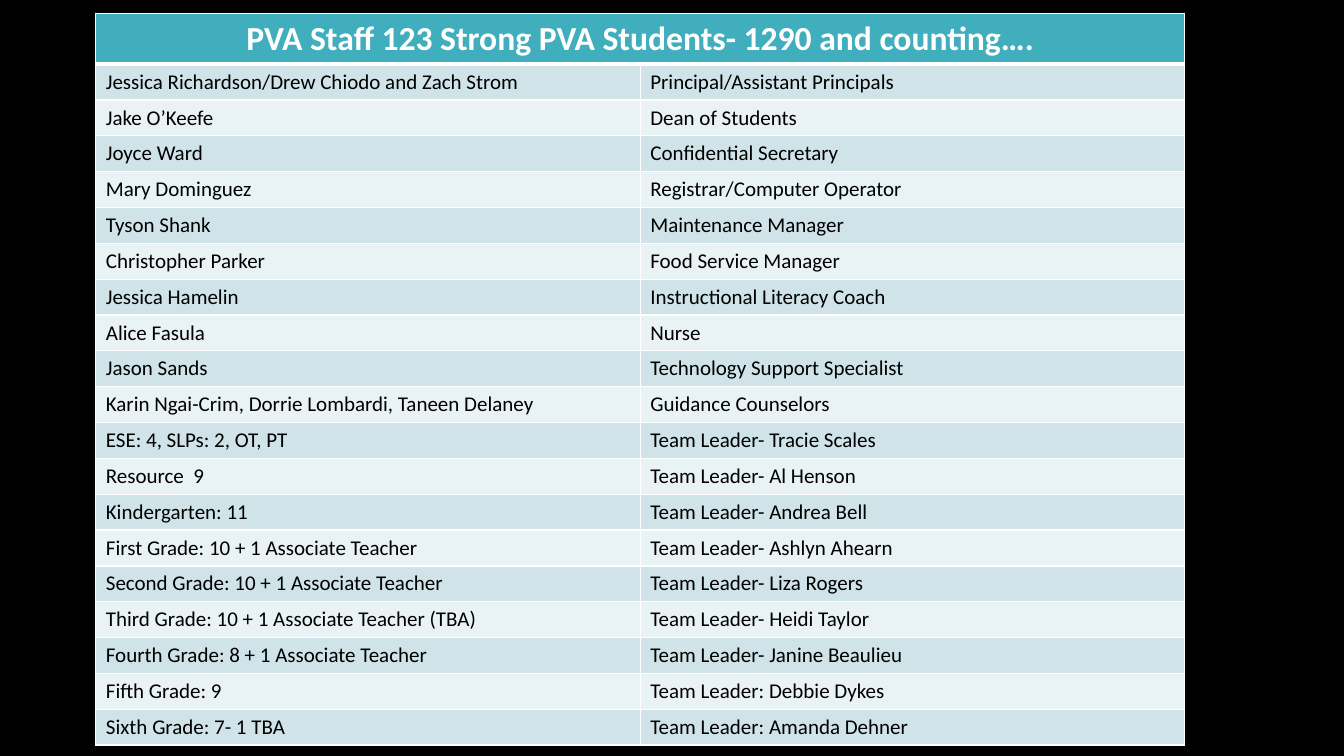
from lxml.etree import SubElement
from pptx import Presentation
from pptx.dml.color import RGBColor
from pptx.enum.text import PP_ALIGN
from pptx.oxml.ns import qn
from pptx.util import Inches, Pt

TITLE = "PVA Staff 123 Strong PVA Students- 1290 and counting…."
STAFF = [
    ("Jessica Richardson/Drew Chiodo and Zach Strom", "Principal/Assistant Principals"),
    ("Jake O’Keefe", "Dean of Students"),
    ("Joyce Ward", "Confidential Secretary"),
    ("Mary Dominguez", "Registrar/Computer Operator"),
    ("Tyson Shank", "Maintenance Manager"),
    ("Christopher Parker", "Food Service Manager"),
    ("Jessica Hamelin", "Instructional Literacy Coach"),
    ("Alice Fasula", "Nurse"),
    ("Jason Sands", "Technology Support Specialist"),
    ("Karin Ngai-Crim, Dorrie Lombardi, Taneen Delaney", "Guidance Counselors"),
    ("ESE: 4, SLPs: 2, OT, PT", "Team Leader- Tracie Scales"),
    ("Resource  9", "Team Leader- Al Henson"),
    ("Kindergarten: 11", "Team Leader- Andrea Bell"),
    ("First Grade: 10 + 1 Associate Teacher", "Team Leader- Ashlyn Ahearn"),
    ("Second Grade: 10 + 1 Associate Teacher", "Team Leader- Liza Rogers"),
    ("Third Grade: 10 + 1 Associate Teacher (TBA)", "Team Leader- Heidi Taylor"),
    ("Fourth Grade: 8 + 1 Associate Teacher", "Team Leader- Janine Beaulieu"),
    ("Fifth Grade: 9", "Team Leader: Debbie Dykes"),
    ("Sixth Grade: 7- 1 TBA", "Team Leader: Amanda Dehner"),
]
COLORS = {
    "background": "000000",
    "header": "41AEBD",
    "dark_band": "CFE3E8",
    "light_band": "E9F2F4",
    "border": "FFFFFF",
    "header_text": "FFFFFF",
    "body_text": "000000",
}
FONT = "Calibri"
HEADER_HEIGHT, ROW_HEIGHT, TABLE_HEIGHT = 0.43, 0.34, 7.15


def color(name):
    return RGBColor.from_string(COLORS[name])


def add_borders(cell, widths):
    properties = cell._tc.get_or_add_tcPr()
    for side, width in widths.items():
        line = SubElement(properties, qn(f"a:ln{side}"), w=str(Pt(width)))
        fill = SubElement(line, qn("a:solidFill"))
        SubElement(fill, qn("a:srgbClr"), val=COLORS["border"])


def style_cell(cell, fill, text_color, size, bold, top=1, bottom=1):
    add_borders(cell, {"L": 1, "R": 1, "T": top, "B": bottom})
    cell.fill.solid()
    cell.fill.fore_color.rgb = color(fill)
    font = cell.text_frame.paragraphs[0].font
    font.name, font.size, font.bold = FONT, Pt(size), bold
    font.color.rgb = color(text_color)


deck = Presentation()
deck.slide_width, deck.slide_height = Inches(13.33), Inches(7.5)
page = deck.slides.add_slide(deck.slide_layouts[6])
page.background.fill.solid()
page.background.fill.fore_color.rgb = color("background")

frame = page.shapes.add_table(
    len(STAFF) + 1, 2, Inches(0.95), Inches(0.13), Inches(10.8), Inches(TABLE_HEIGHT)
)
table = frame.table
for index, row in enumerate(table.rows):
    row.height = Inches(ROW_HEIGHT if index else HEADER_HEIGHT)
frame.height = Inches(TABLE_HEIGHT)

title_cell = table.cell(0, 0)
title_cell.merge(table.cell(0, 1))
title_cell.text_frame.text = TITLE
title_cell.text_frame.paragraphs[0].alignment = PP_ALIGN.CENTER
for cell in table.rows[0].cells:
    style_cell(cell, "header", "header_text", 24, True, bottom=3)

for index, entries in enumerate(STAFF, start=1):
    band = "dark_band" if index % 2 else "light_band"
    for cell, entry in zip(table.rows[index].cells, entries):
        cell.text_frame.text = entry
        style_cell(cell, band, "body_text", 15, False, top=3 if index == 1 else 1)

deck.save("out.pptx")
